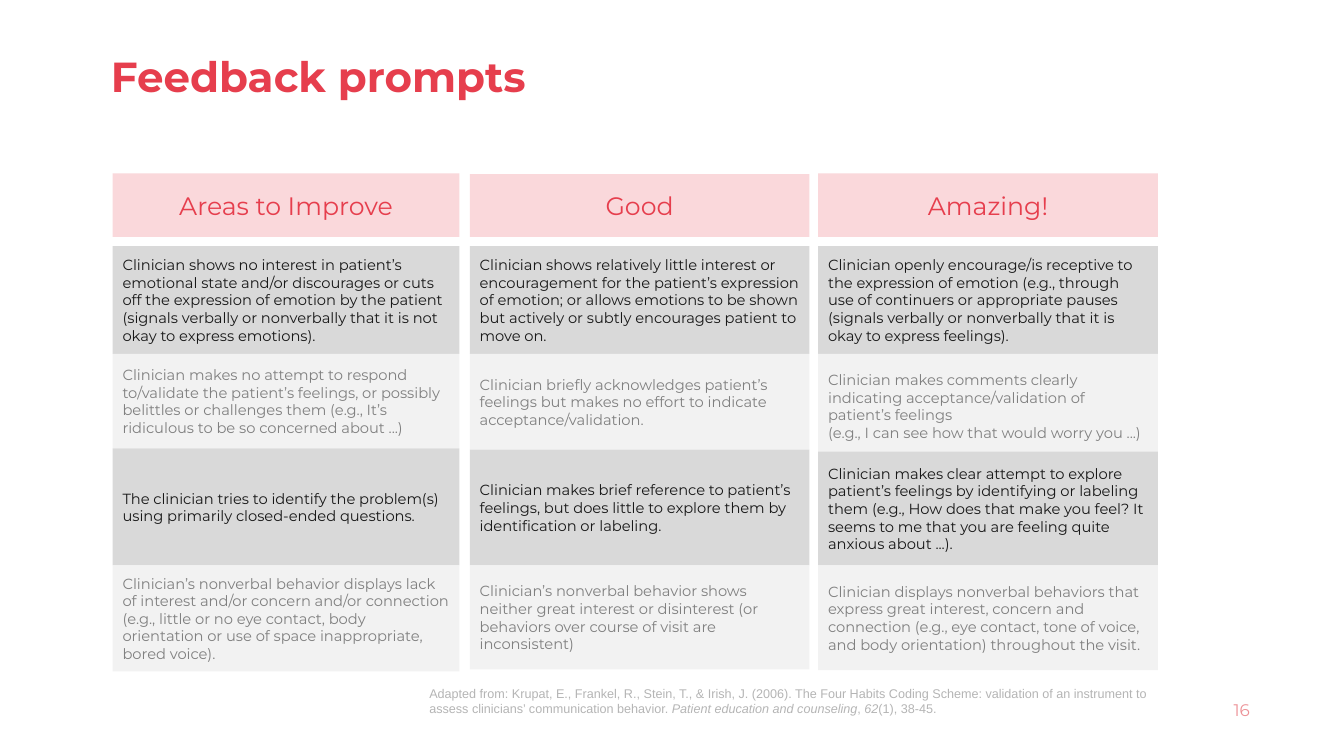
import pptx
import pptx.util
import pptx.dml.color
import pptx.enum.shapes
import pptx.enum.text
from pptx.util import Cm

ALIGN = pptx.enum.text.PP_ALIGN
MIDDLE = pptx.enum.text.MSO_ANCHOR.MIDDLE
RED = "E63E4D"


def rgb(value):
    return pptx.dml.color.RGBColor.from_string(value)


def style_text(frame, size, color, align=ALIGN.LEFT, font="Montserrat"):
    frame.word_wrap = True
    for paragraph in frame.paragraphs:
        paragraph.alignment = align
        for run in paragraph.runs:
            run.font.name = font
            run.font.size = pptx.util.Pt(size)
            run.font.color.rgb = rgb(color)


columns = [
    (2.84, 8.74, [
        (4.37, 1.6, "Areas to Improve"),
        (6.2, 2.72, "Clinician shows no interest in patient’s emotional state and/or discourages or cuts off the expression of emotion by the patient (signals verbally or nonverbally that it is not okay to express emotions)."),
        (8.92, 2.38, "Clinician makes no attempt to respond to/validate the patient’s feelings, or possibly belittles or challenges them (e.g., It’s ridiculous to be so concerned about ...)"),
        (11.3, 2.95, "The clinician tries to identify the problem(s) using primarily closed-ended questions."),
        (14.25, 2.67, "Clinician’s nonverbal behavior displays lack of interest and/or concern and/or connection (e.g., little or no eye contact, body orientation or use of space inappropriate, bored voice)."),
    ]),
    (11.84, 8.56, [
        (4.39, 1.58, "Good"),
        (6.2, 2.72, "Clinician shows relatively little interest or encouragement for the patient’s expression of emotion; or allows emotions to be shown but actively or subtly encourages patient to move on."),
        (8.92, 2.41, "Clinician briefly acknowledges patient’s feelings but makes no effort to indicate acceptance/validation."),
        (11.33, 2.92, "Clinician makes brief reference to patient’s feelings, but does little to explore them by identification or labeling."),
        (14.25, 2.62, "Clinician’s nonverbal behavior shows neither great interest or disinterest (or behaviors over course of visit are inconsistent)"),
    ]),
    (20.62, 8.56, [
        (4.37, 1.6, "Amazing!"),
        (6.2, 2.72, "Clinician openly encourage/is receptive to the expression of emotion (e.g., through use of continuers or appropriate pauses (signals verbally or nonverbally that it is okay to express feelings)."),
        (8.92, 2.62, "Clinician makes comments clearly indicating acceptance/validation of patient’s feelings\n(e.g., I can see how that would worry you ...)"),
        (11.38, 2.87, "Clinician makes clear attempt to explore patient’s feelings by identifying or labeling them (e.g., How does that make you feel? It seems to me that you are feeling quite anxious about ...)."),
        (14.25, 2.64, "Clinician displays nonverbal behaviors that express great interest, concern and connection (e.g., eye contact, tone of voice, and body orientation) throughout the visit."),
    ]),
]
heading_style = ("FAD8DB", 18, RED, ALIGN.CENTER)
dark_style = ("D9D9D9", 10.5, "181818", ALIGN.LEFT)
light_style = ("F2F2F2", 10.5, "808080", ALIGN.LEFT)
row_styles = [heading_style, dark_style, light_style, dark_style, light_style]

citation_parts = [
    ("Adapted from: Krupat, E., Frankel, R., Stein, T., & Irish, J. (2006). The Four Habits Coding Scheme: validation of an instrument to assess clinicians’ communication behavior. ", False),
    ("Patient education and counseling", True),
    (", ", False),
    ("62", True),
    ("(1), 38-45.", False),
]

deck = pptx.Presentation()
deck.slide_width = Cm(33.87)
deck.slide_height = Cm(19.05)
slide = deck.slides.add_slide(deck.slide_layouts[5])

title = slide.shapes.title
title.left, title.top, title.width, title.height = Cm(2.54), Cm(1.19), Cm(29.21), Cm(1.6)
title.text_frame.text = "Feedback prompts"
title.text_frame.vertical_anchor = MIDDLE
title.text_frame.paragraphs[0].line_spacing = 0.9
style_text(title.text_frame, 30, RED)
title.text_frame.paragraphs[0].runs[0].font.bold = True

for left, width, prompts in columns:
    for (top, height, words), (fill, size, color, align) in zip(prompts, row_styles):
        prompt = slide.shapes.add_shape(
            pptx.enum.shapes.MSO_SHAPE.RECTANGLE, Cm(left), Cm(top), Cm(width), Cm(height))
        prompt.shadow.inherit = False
        prompt.fill.solid()
        prompt.fill.fore_color.rgb = rgb(fill)
        prompt.line.fill.background()
        prompt.text_frame.text = words
        prompt.text_frame.vertical_anchor = MIDDLE
        style_text(prompt.text_frame, size, color, align)

citation = slide.shapes.add_textbox(Cm(10.57), Cm(17.15), Cm(18.62), Cm(1.02)).text_frame
for words, italic in citation_parts:
    run = citation.paragraphs[0].add_run()
    run.text = words
    run.font.italic = italic
style_text(citation, 9, "B5B5B5", font="Arial")

page_number = slide.shapes.add_textbox(Cm(24.13), Cm(17.37), Cm(7.62), Cm(1.02)).text_frame
page_number.text = "16"
page_number.vertical_anchor = MIDDLE
style_text(page_number, 12, "ED9297", ALIGN.RIGHT)

deck.save("out.pptx")
